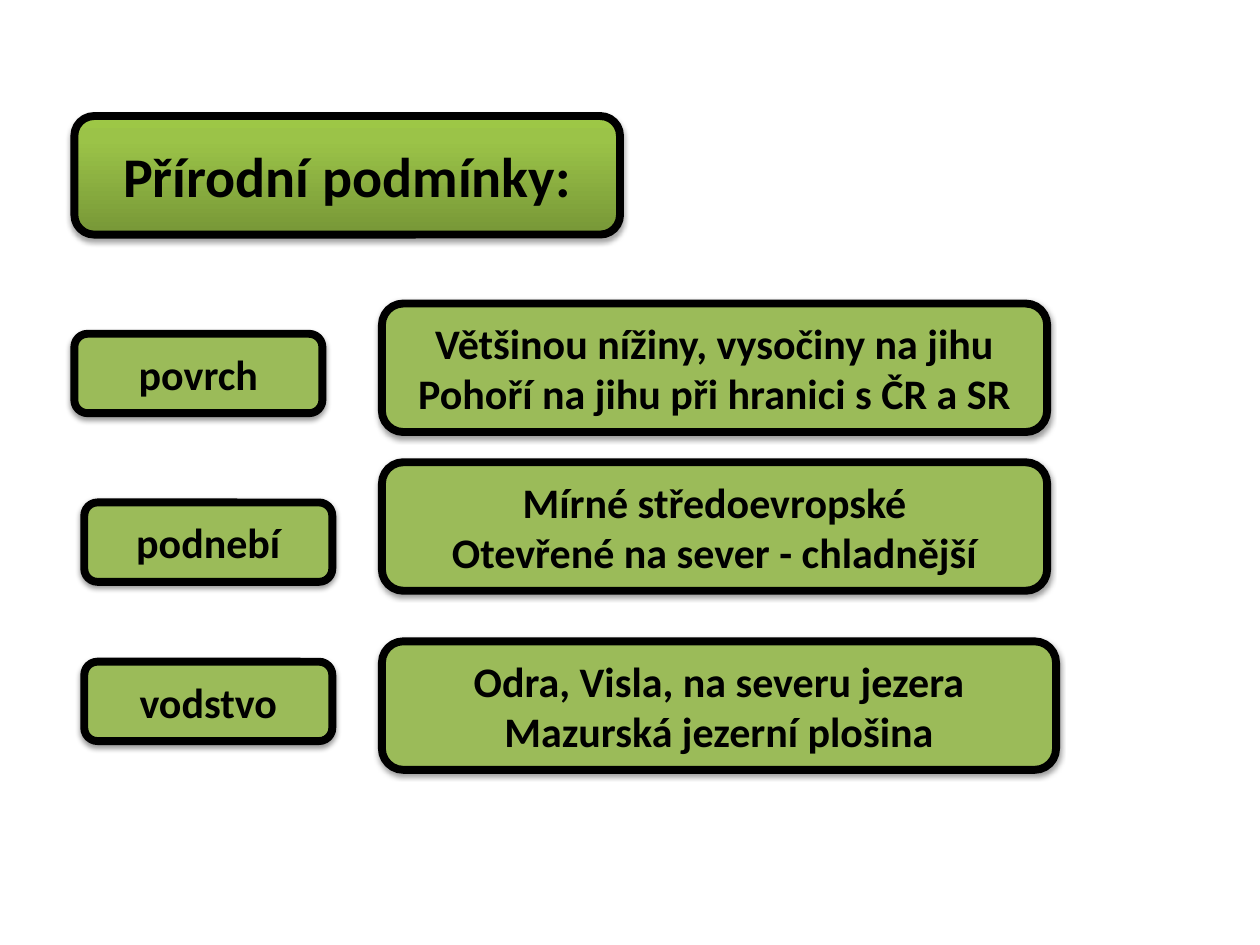
import copy
from dataclasses import dataclass

import lxml.etree
import pptx
import pptx.dml.color
import pptx.enum.shapes
import pptx.enum.text
import pptx.oxml.ns
import pptx.util
from pptx.util import Cm

BLACK = pptx.dml.color.RGBColor(0x00, 0x00, 0x00)
GREEN = pptx.dml.color.RGBColor(0x9B, 0xBB, 0x59)
HEADING_STOPS = [
    (0, pptx.dml.color.RGBColor(0x77, 0x97, 0x37)),
    (0.8, pptx.dml.color.RGBColor(0x9B, 0xC3, 0x48)),
    (1, pptx.dml.color.RGBColor(0x9D, 0xC7, 0x46)),
]
FONT = "Calibri"
LABEL_SIZE = (5, 1.6)
FACTS_LEFT, FACTS_HEIGHT = 7.7, 2.59


@dataclass
class Box:
    """A rounded box; lengths in centimetres, font size in points."""
    left: float
    top: float
    width: float
    height: float
    lines: list[str]
    font_size: int = 24


@dataclass
class Topic:
    """A label with the facts that stand beside it."""
    name: str
    label_left: float
    label_top: float
    facts: list[str]
    facts_top: float
    facts_width: float


HEADING = Box(1.5, 2.34, 11, 2.39, ["Přírodní podmínky:"], 32)
TOPICS = [
    Topic("povrch", 1.5, 6.73,
          ["Většinou nížiny, vysočiny na jihu",
           "Pohoří na jihu při hranici s ČR a SR"], 6.12, 13.41),
    Topic("podnebí", 1.7, 10.13,
          ["Mírné středoevropské",
           "Otevřené na sever - chladnější"], 9.32, 13.41),
    Topic("vodstvo", 1.7, 13.34,
          ["Odra, Visla, na severu jezera",
           "Mazurská jezerní plošina"], 12.93, 13.59),
]


def add_shadow(shape, opacity: int, distance: float) -> None:
    """Cast a soft black shadow straight down."""
    qn = pptx.oxml.ns.qn
    shape.shadow.inherit = False
    effects = shape._element.spPr.find(qn("a:effectLst"))
    shadow = lxml.etree.SubElement(
        effects, qn("a:outerShdw"),
        blurRad=str(pptx.util.Pt(3.1)), dist=str(pptx.util.Pt(distance)),
        dir="5400000", rotWithShape="0")
    color = lxml.etree.SubElement(shadow, qn("a:srgbClr"), val=str(BLACK))
    lxml.etree.SubElement(color, qn("a:alpha"), val=str(opacity * 1000))


def fill_heading(shape) -> None:
    """Fill with a three-stop gradient, dark at the bottom."""
    shape.fill.gradient()
    shape.fill.gradient_angle = 90
    stop_list = shape._element.spPr.find(".//" + pptx.oxml.ns.qn("a:gsLst"))
    stop_list.append(copy.deepcopy(stop_list[-1]))
    for stop, (position, color) in zip(shape.fill.gradient_stops, HEADING_STOPS):
        stop.position = position
        stop.color.rgb = color


def add_box(slide, box: Box, opacity: int = 38, distance: float = 1.6):
    """Draw a green rounded box with centred bold text."""
    shape = slide.shapes.add_shape(
        pptx.enum.shapes.MSO_SHAPE.ROUNDED_RECTANGLE,
        Cm(box.left), Cm(box.top), Cm(box.width), Cm(box.height))
    shape.fill.solid()
    shape.fill.fore_color.rgb = GREEN
    shape.line.color.rgb = BLACK
    shape.line.width = pptx.util.Pt(4.5)
    add_shadow(shape, opacity, distance)

    frame = shape.text_frame
    frame.vertical_anchor = pptx.enum.text.MSO_ANCHOR.MIDDLE
    frame.text = "\n".join(box.lines)
    for paragraph in frame.paragraphs:
        paragraph.alignment = pptx.enum.text.PP_ALIGN.CENTER
        paragraph.font.name = FONT
        paragraph.font.size = pptx.util.Pt(box.font_size)
        paragraph.font.bold = True
        paragraph.font.color.rgb = BLACK
    return shape


def add_topic(slide, topic: Topic) -> None:
    add_box(slide, Box(topic.label_left, topic.label_top, *LABEL_SIZE, [topic.name]))
    add_box(slide, Box(FACTS_LEFT, topic.facts_top, topic.facts_width,
                       FACTS_HEIGHT, topic.facts))


def main() -> None:
    presentation = pptx.Presentation()
    presentation.slide_width = Cm(25.4)
    presentation.slide_height = Cm(19.05)
    slide = presentation.slides.add_slide(presentation.slide_layouts[6])

    # Heading
    fill_heading(add_box(slide, HEADING, opacity=35, distance=1.8))

    # Topics with their facts
    for topic in TOPICS:
        add_topic(slide, topic)

    presentation.save("out.pptx")


if __name__ == "__main__":
    main()
